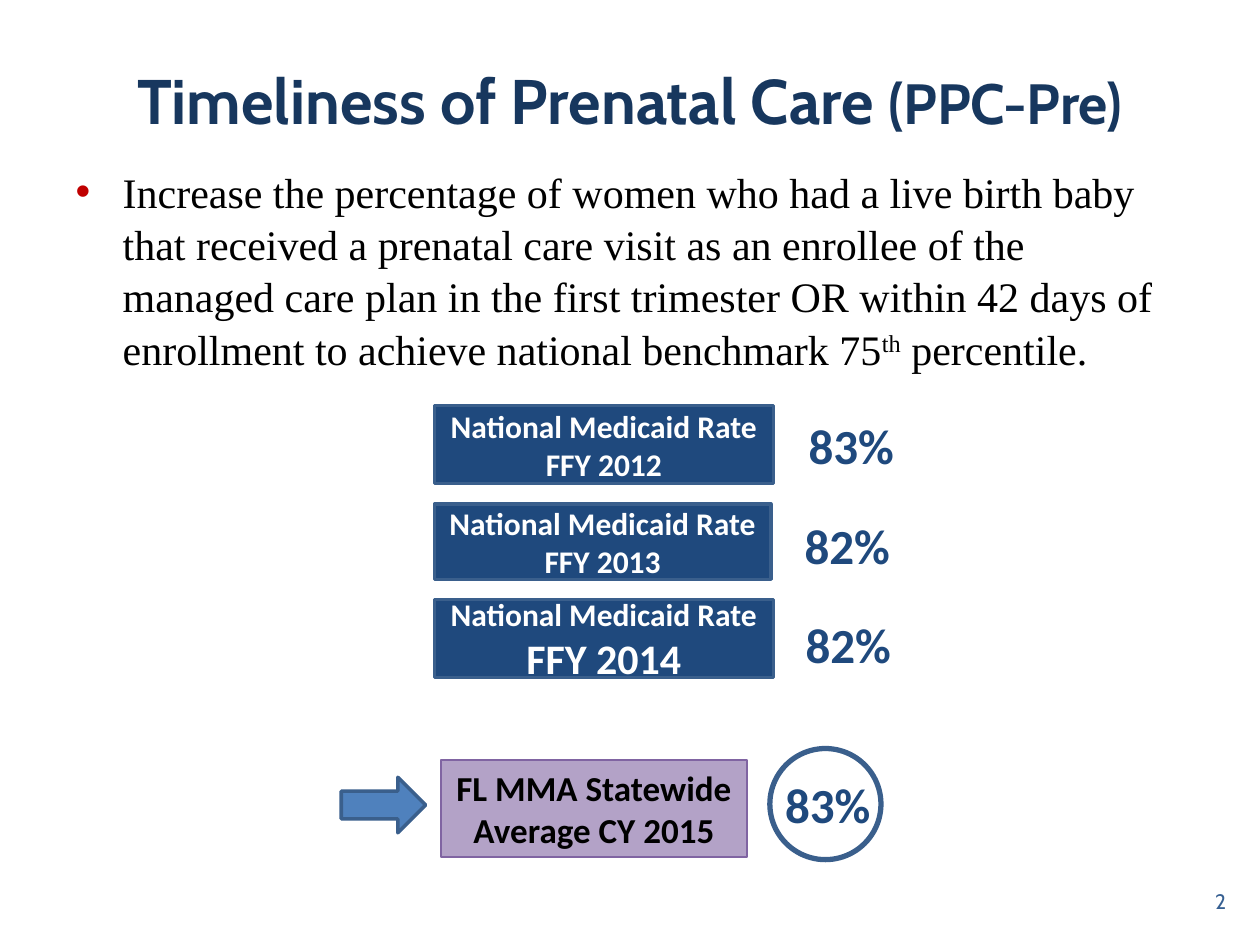
from lxml import etree
from pptx import Presentation
from pptx.dml.color import RGBColor
from pptx.enum.shapes import MSO_SHAPE
from pptx.enum.text import MSO_ANCHOR, MSO_AUTO_SIZE, PP_ALIGN
from pptx.oxml.ns import qn
from pptx.util import Cm, Pt

RECT, OVAL, ARROW = MSO_SHAPE.RECTANGLE, MSO_SHAPE.OVAL, MSO_SHAPE.RIGHT_ARROW
CENTER, RIGHT = PP_ALIGN.CENTER, PP_ALIGN.RIGHT
TOP, MIDDLE = MSO_ANCHOR.TOP, MSO_ANCHOR.MIDDLE
NO_AUTOFIT = MSO_AUTO_SIZE.NONE
NAVY, EDGE = "1F497D", "3A5F8C"


def write(shape, paragraphs, font, color, bold=False, align=None, anchor=TOP):
    """Fill a shape with paragraphs, each a list of (text, points) runs."""
    frame = shape.text_frame
    frame.word_wrap = True
    frame.auto_size = NO_AUTOFIT
    frame.vertical_anchor = anchor
    for number, runs in enumerate(paragraphs):
        paragraph = frame.add_paragraph() if number else frame.paragraphs[0]
        paragraph.alignment = align
        for text, points in runs:
            run = paragraph.add_run()
            run.text = text
            run.font.name = font
            run.font.size = Pt(points)
            run.font.bold = bold
            run.font.color.rgb = RGBColor.from_string(color)


def add_figure(kind, box, fill, edge, width):
    figure = slide.shapes.add_shape(kind, *map(Cm, box))
    figure.shadow.inherit = False
    if fill:
        figure.fill.solid()
        figure.fill.fore_color.rgb = RGBColor.from_string(fill)
    else:
        figure.fill.background()
    figure.line.color.rgb = RGBColor.from_string(edge)
    figure.line.width = Pt(width)
    return figure


prs = Presentation()
prs.slide_width, prs.slide_height = Cm(25.4), Cm(19.05)
slide = prs.slides.add_slide(prs.slide_layouts[1])
title, goal = slide.placeholders[0], slide.placeholders[1]

# Title and goal
title.left, title.top, title.width, title.height = Cm(1.27), Cm(0.41), Cm(22.86), Cm(3.18)
write(title, [[("Timeliness of Prenatal Care ", 36), ("(PPC-Pre)", 32.4)]],
      "Cabin", "17375E", True, CENTER, MIDDLE)

goal.left, goal.top, goal.width, goal.height = Cm(1.27), Cm(3.18), Cm(22.86), Cm(4.65)
goal_paragraph = goal.text_frame.paragraphs[0]
goal_paragraph.line_spacing = 1.04
goal_paragraph.space_before = Pt(0)
bullet = goal_paragraph._p.get_or_add_pPr()
bullet.set("marL", str(Cm(0.95)))
bullet.set("indent", str(-Cm(0.95)))
bullet_color = etree.SubElement(bullet, qn("a:buClr"))
etree.SubElement(bullet_color, qn("a:srgbClr"), val="C00000")
etree.SubElement(bullet, qn("a:buFont"), typeface="Arial")
etree.SubElement(bullet, qn("a:buChar"), char="•")
write(goal, [[
    ("Increase the percentage of women who had a live birth baby that received "
     "a prenatal care visit as an enrollee of the managed care plan in the first "
     "trimester OR within 42 days of enrollment to achieve national benchmark 75", 24),
    ("th", 24),
    (" percentile.", 24),
]], "Times New Roman", "000000")
goal_paragraph.runs[1]._r.get_or_add_rPr().set("baseline", "30000")

# National rates: year, year size, box top, box width, box height, rate, rate left, rate top
national_rates = [
    ("FFY 2012", 18, 8.18, 6.83, 1.57, "83%", 15.6, 8.26),
    ("FFY 2013", 18, 10.16, 6.78, 1.52, "82%", 15.52, 10.26),
    ("FFY 2014", 24, 12.09, 6.83, 1.57, "82%", 15.54, 12.27),
]
for year, year_size, top, width, height, rate, rate_left, rate_top in national_rates:
    label = add_figure(RECT, (8.76, top, width, height), NAVY, EDGE, 2)
    write(label, [[("National Medicaid Rate", 18)], [(year, year_size)]],
          "Calibri", "FFFFFF", True, CENTER, MIDDLE)
    value = slide.shapes.add_textbox(Cm(rate_left), Cm(rate_top), Cm(3.12), Cm(1.45))
    write(value, [[(rate, 28)]], "Calibri", NAVY, True, CENTER)

# Statewide average
statewide = add_figure(RECT, (8.89, 15.32, 6.17, 1.96), "B3A2C7", "8064A2", 1.5)
write(statewide, [[("FL MMA Statewide Average CY 2015", 20)]],
      "Calibri", "000000", True, CENTER)
statewide_rate = slide.shapes.add_textbox(Cm(15.54), Cm(15.49), Cm(2.29), Cm(1.45))
write(statewide_rate, [[("83%", 28)]], "Calibri", NAVY, True, CENTER)
add_figure(OVAL, (15.52, 15.09, 2.24, 2.24), None, EDGE, 3)
add_figure(ARROW, (6.88, 15.67, 1.7, 1.12), "4F81BD", EDGE, 2)

page_number = slide.shapes.add_textbox(Cm(19.05), Cm(17.65), Cm(5.92), Cm(1.02))
write(page_number, [[("2", 12)]], "Cabin", "376092", align=RIGHT, anchor=MIDDLE)

prs.save("out.pptx")
